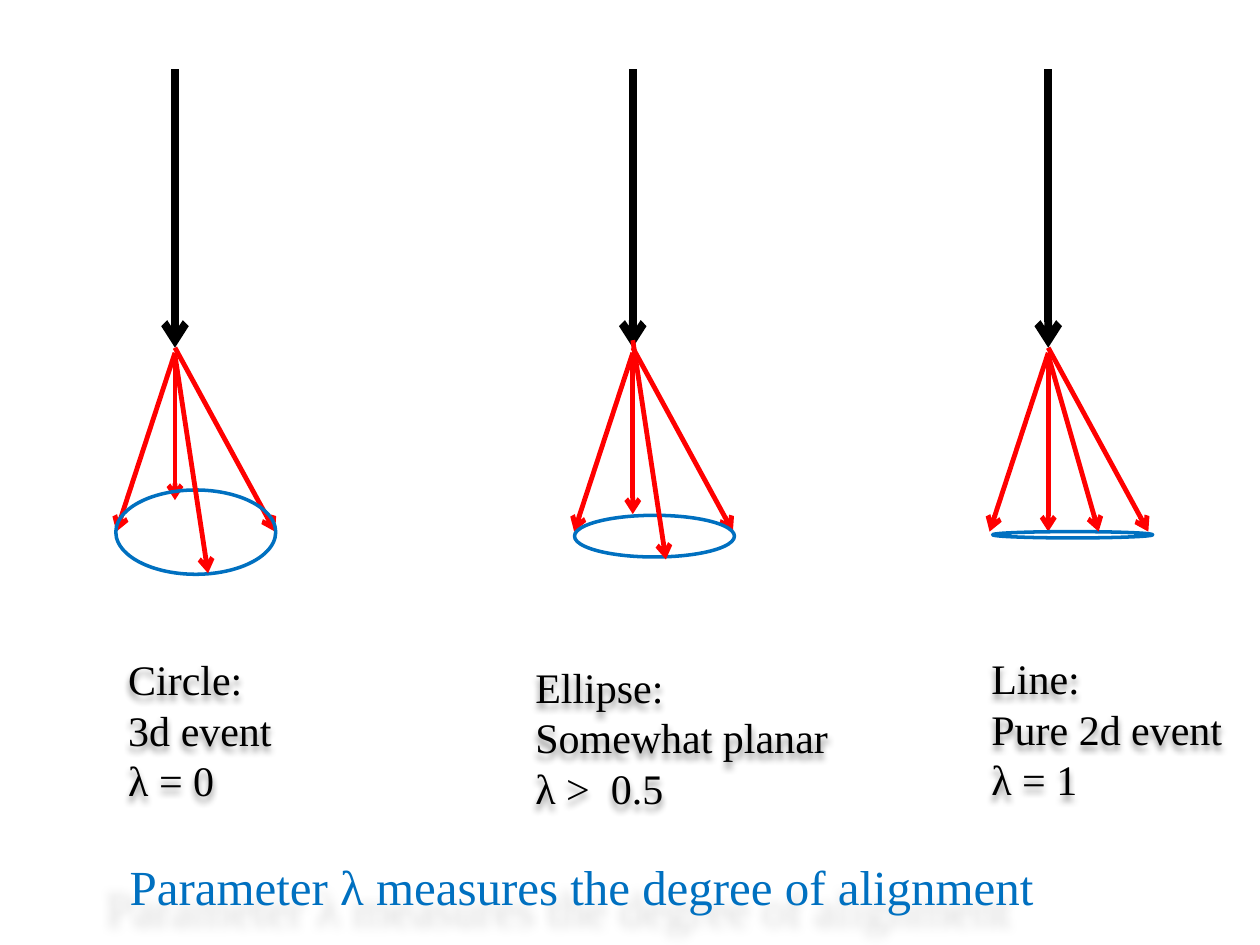
from lxml.etree import SubElement
from pptx import Presentation
from pptx.dml.color import RGBColor
from pptx.enum.shapes import MSO_CONNECTOR as Connector, MSO_SHAPE as Shape
from pptx.enum.text import MSO_AUTO_SIZE as AutoSize
from pptx.oxml.ns import qn
from pptx.util import Pt

BLACK = RGBColor(0x00, 0x00, 0x00)
RED = RGBColor(0xFF, 0x00, 0x00)
BLUE = RGBColor(0x00, 0x70, 0xC0)

ARRIVAL_TOP, APEX_Y, TIP_Y = 39.6, 198.7, 303.8
LEFT_TIP, RIGHT_TIP, RING_WIDTH = -33.5, 57.2, 91.4


class EventPage:
    """Draws particle events on one slide in a shared style."""

    font_name = "Times New Roman"

    def __init__(self, page):
        self.page = page

    def arrow(self, start, end, color=RED, width=2.75):
        points = [Pt(value) for value in (*start, *end)]
        line = self.page.shapes.add_connector(Connector.STRAIGHT, *points)
        line.line.color.rgb = color
        line.line.width = Pt(width)
        SubElement(line.line._get_or_add_ln(), qn("a:tailEnd"), type="arrow")
        SubElement(line._element.spPr, qn("a:effectLst"))

    def ring(self, left, top, height):
        frame = [Pt(value) for value in (left, top, RING_WIDTH, height)]
        ring = self.page.shapes.add_shape(Shape.OVAL, *frame)
        ring.shadow.inherit = False
        ring.fill.background()
        ring.line.color.rgb = BLUE
        ring.line.width = Pt(2)

    def event(self, apex_x, center_tip, front_start, front_tip, ring):
        self.arrow((apex_x, 203), (apex_x, center_tip))
        self.arrow((apex_x, 201.6), (apex_x + LEFT_TIP, TIP_Y))
        self.arrow((apex_x, APEX_Y), (apex_x + RIGHT_TIP, TIP_Y))
        self.arrow((apex_x, ARRIVAL_TOP), (apex_x, APEX_Y), BLACK, 4.5)
        ring_shift, ring_top, ring_height = ring
        self.ring(apex_x + ring_shift, ring_top, ring_height)
        tip_shift, tip_y = front_tip
        self.arrow((apex_x, front_start), (apex_x + tip_shift, tip_y))

    def shadow(self, box, blur, distance, degrees, opacity):
        effects = SubElement(box._element.spPr, qn("a:effectLst"))
        shadow = SubElement(effects, qn("a:outerShdw"), blurRad=str(Pt(blur)),
                            dist=str(Pt(distance)), dir=str(degrees * 60000),
                            algn="ctr", rotWithShape="0")
        color = SubElement(shadow, qn("a:srgbClr"), val=str(BLACK))
        SubElement(color, qn("a:alpha"), val=str(opacity * 1000))

    def text(self, words, frame, size=24, color=BLACK, wrap=False):
        box = self.page.shapes.add_textbox(*[Pt(value) for value in frame])
        text_frame = box.text_frame
        text_frame.word_wrap = wrap
        text_frame.auto_size = AutoSize.SHAPE_TO_FIT_TEXT
        text_frame.text = words
        for para in text_frame.paragraphs:
            for span in para.runs:
                span.font.name = self.font_name
                span.font.size = Pt(size)
                span.font.color.rgb = color
        return box


def main():
    deck = Presentation()
    deck.slide_width, deck.slide_height = Pt(720), Pt(540)
    slide = EventPage(deck.slides.add_slide(deck.slide_layouts[6]))

    slide.event(100, 285.8, 203, (18.9, 327.6), (-33.8, 280, 48.2))
    slide.event(361.6, 293.8, 194.4, (18.9, 319.7), (-33.3, 294.5, 23.8))
    slide.event(599, TIP_Y, 203, (28.8, TIP_Y), (-31.7, 303.8, 3.6))

    captions = [
        ("Circle:\n3d event\nλ = 0", (66.2, 370, 97.2, 94.3)),
        ("Ellipse:\nSomewhat planar\nλ >  0.5", (298.8, 374.4, 183.6, 94.3)),
        ("Line:\nPure 2d event\nλ = 1", (559.4, 369.4, 147.6, 94.3)),
    ]
    for words, frame in captions:
        slide.shadow(slide.text(words, frame), 4, 3, 90, 45)

    summary = slide.text("Parameter λ measures the degree of alignment",
                         (67, 486, 589.7, 41), 28, BLUE, True)
    slide.shadow(summary, 6, 18, 140, 15)

    deck.save("out.pptx")


if __name__ == "__main__":
    main()
